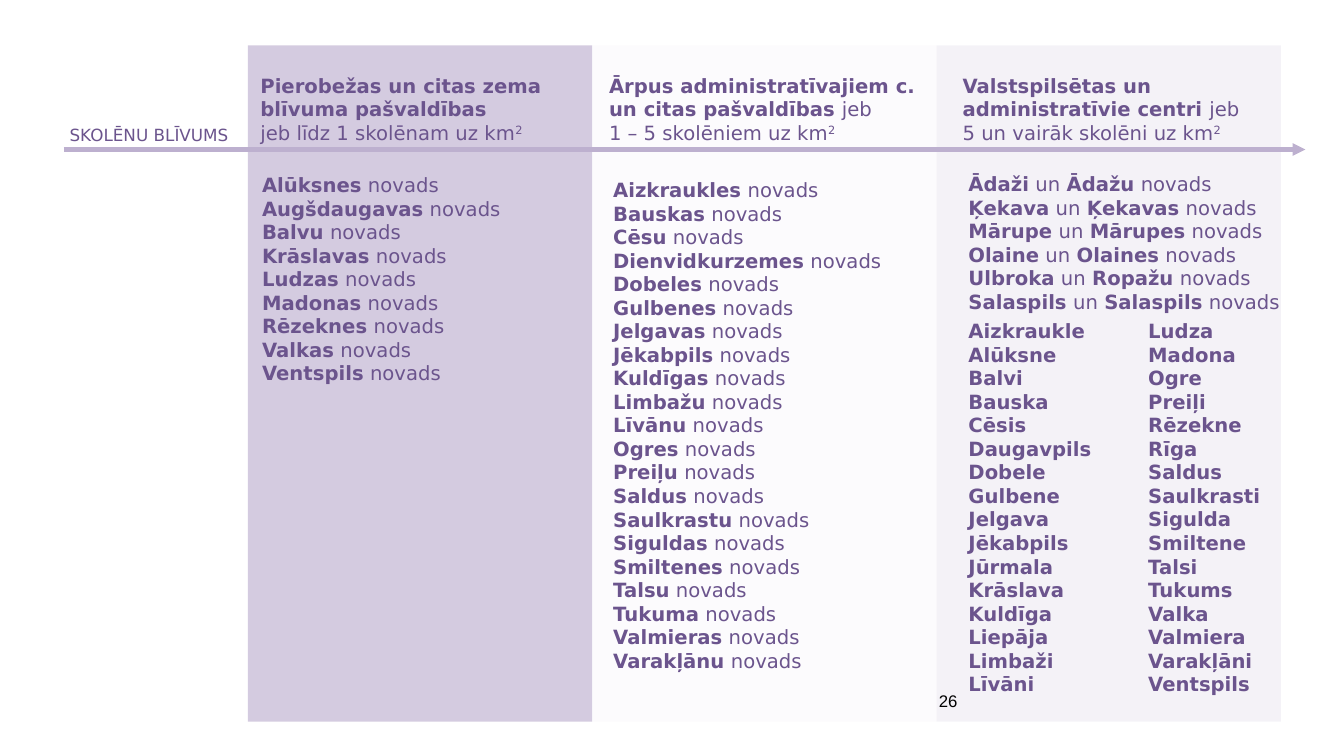
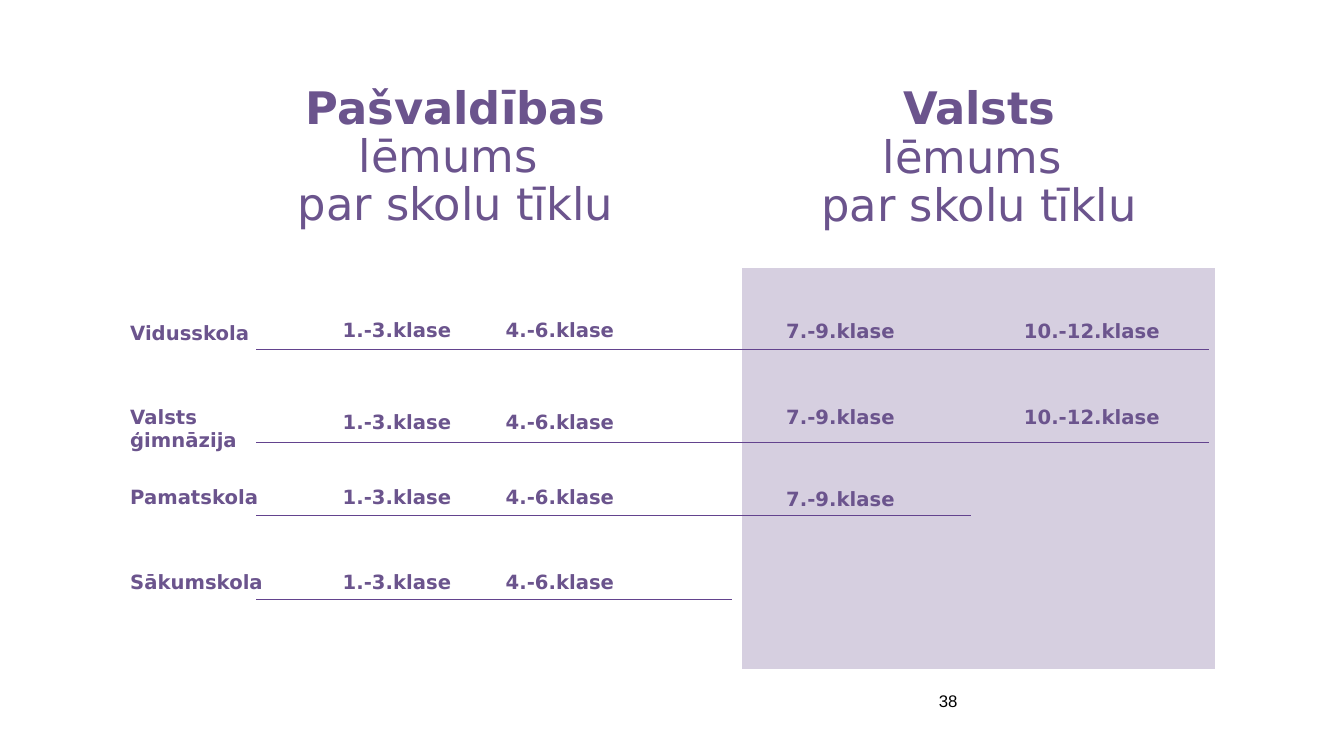
from dataclasses import dataclass
from typing import Optional, Sequence

from lxml.etree import SubElement
from pptx import Presentation
from pptx.dml.color import RGBColor
from pptx.enum.shapes import MSO_CONNECTOR as Connector, MSO_SHAPE as Preset
from pptx.enum.text import MSO_ANCHOR as Anchor, MSO_AUTO_SIZE as AutoSize, PP_ALIGN as Align
from pptx.oxml.ns import qn
from pptx.util import Emu, Pt

# The 16:9 slide is a grid of 160 by 90 square cells.
COLUMNS, ROWS = 160, 90
CELL = 76200

TEXT_PURPLE = RGBColor(0x6B, 0x54, 0x8D)
DEEP_PURPLE = RGBColor(0x66, 0x46, 0x90)
SOFT_PURPLE = RGBColor(0xDA, 0xD3, 0xE5)
PALE_PURPLE = RGBColor(0xF5, 0xF4, 0xF8)
PANEL_PURPLE = RGBColor(0xD6, 0xCF, 0xE0)
AXIS_PURPLE = RGBColor(0xBD, 0xB0, 0xCF)
LINE_PURPLE = RGBColor(0x63, 0x43, 0x8E)
WHITE = RGBColor(0xFF, 0xFF, 0xFF)
BLACK = RGBColor(0, 0, 0)

FONT = "DejaVu Sans"
PAGE_FONT = "Arial"
INSET = 0.6
BAND_OPACITY = 28


@dataclass(frozen=True)
class Box:
    left: float
    top: float
    width: float
    height: float

    def lengths(self) -> list[Emu]:
        return [cells(n) for n in (self.left, self.top, self.width, self.height)]


@dataclass(frozen=True)
class Piece:
    text: str
    bold: bool = False
    superscript: bool = False


Line = Sequence[Piece]


@dataclass(frozen=True)
class TextStyle:
    size: float = 14
    font: str = FONT
    color: RGBColor = TEXT_PURPLE
    align: Align = Align.LEFT
    anchor: Anchor = Anchor.TOP
    spacing: float = 1.0
    inset: float = INSET
    wrap: bool = True


BODY = TextStyle()
AXIS_LABEL = TextStyle(size=12, align=Align.CENTER)
HEADING = TextStyle(size=32, align=Align.CENTER, anchor=Anchor.MIDDLE, spacing=0.9, inset=0)
PAGE_NUMBER = TextStyle(size=12, font=PAGE_FONT, color=BLACK, align=Align.RIGHT,
                        anchor=Anchor.MIDDLE, wrap=False)


@dataclass(frozen=True)
class Band:
    color: RGBColor
    header: Box
    header_lines: Sequence[Line]


@dataclass(frozen=True)
class SchoolRow:
    name: str
    name_top: float
    local_top: float
    state_top: float
    line_top: float
    stages: int


def cells(count: float) -> Emu:
    return Emu(round(count * CELL))


def fill_text(frame, lines: Sequence[Line], style: TextStyle) -> None:
    frame.auto_size = AutoSize.NONE
    frame.word_wrap = style.wrap
    frame.vertical_anchor = style.anchor
    frame.margin_left = frame.margin_right = cells(style.inset)
    frame.margin_top = frame.margin_bottom = cells(style.inset)
    for index, line in enumerate(lines):
        paragraph = frame.add_paragraph() if index else frame.paragraphs[0]
        paragraph.alignment = style.align
        paragraph.line_spacing = style.spacing
        for piece in line:
            run = paragraph.add_run()
            run.text = piece.text
            run.font.name = style.font
            run.font.size = Pt(style.size)
            run.font.bold = piece.bold
            run.font.color.rgb = style.color
            if piece.superscript:
                run._r.get_or_add_rPr().set("baseline", "30000")


def add_text(slide, box: Box, lines: Sequence[Line], style: TextStyle = BODY) -> None:
    fill_text(slide.shapes.add_textbox(*box.lengths()).text_frame, lines, style)


def add_rectangle(slide, box: Box, color: RGBColor, opacity: int = 100,
                  border: Optional[RGBColor] = None) -> None:
    shape = slide.shapes.add_shape(Preset.RECTANGLE, *box.lengths())
    shape.shadow.inherit = False
    shape.fill.solid()
    shape.fill.fore_color.rgb = color
    if opacity < 100:
        color_element = next(shape._element.spPr.iter(qn("a:srgbClr")))
        SubElement(color_element, qn("a:alpha")).set("val", str(opacity * 1000))
    if border is None:
        shape.line.fill.background()
    else:
        shape.line.color.rgb = border
        shape.line.width = Pt(2)


def add_level_line(slide, left: float, right: float, top: float, color: RGBColor,
                   width: float, arrow: bool = False) -> None:
    connector = slide.shapes.add_connector(
        Connector.STRAIGHT, cells(left), cells(top), cells(right), cells(top))
    connector.line.color.rgb = color
    connector.line.width = Pt(width)
    if arrow:
        SubElement(connector.line._get_or_add_ln(), qn("a:tailEnd")).set("type", "triangle")
    SubElement(connector._element.spPr, qn("a:effectLst"))


def add_page_number(slide, number: int) -> None:
    add_text(slide, Box(77.3, 81, 37.3, 4.8), [[Piece(str(number))]], PAGE_NUMBER)


def bold_lines(names: str) -> list[Line]:
    return [[Piece(name, True)] for name in names.split()]


def county_lines(names: str) -> list[Line]:
    return [[Piece(name, True), Piece(" novads")] for name in names.split()]


def pair_lines(pairs: Sequence[tuple[str, str]]) -> list[Line]:
    return [[Piece(town, True), Piece(" un "), Piece(county, True), Piece(" novads")]
            for town, county in pairs]


def density_line(text: str) -> Line:
    return [Piece(text), Piece("2", superscript=True)]


def heading_lines(decider: str) -> list[Line]:
    return [[Piece(decider, True)], [Piece("lēmums ")], [Piece("par skolu tīklu")]]


BAND_LEFT, BAND_WIDTH = 29.5, 41
BANDS = [
    Band(DEEP_PURPLE, Box(30.4, 8.2, 38.6, 9.7),
         [[Piece("Pierobežas un citas zema blīvuma pašvaldības", True)],
          density_line("jeb līdz 1 skolēnam uz km")]),
    Band(PALE_PURPLE, Box(71.9, 8.2, 38, 9.7),
         [[Piece("Ārpus administratīvajiem c. un citas pašvaldības ", True), Piece("jeb")],
          density_line("1 – 5 skolēniem uz km")]),
    Band(SOFT_PURPLE, Box(114, 8.2, 36.5, 9.7),
         [[Piece("Valstspilsētas un administratīvie centri ", True), Piece("jeb")],
          density_line("5 un vairāk skolēni uz km")]),
]

PLACE_LISTS = [
    (Box(30.6, 20, 39.4, 26.6), county_lines(
        "Alūksnes Augšdaugavas Balvu Krāslavas Ludzas Madonas Rēzeknes Valkas Ventspils")),
    (Box(72.4, 20.6, 39.4, 60.6), county_lines(
        "Aizkraukles Bauskas Cēsu Dienvidkurzemes Dobeles Gulbenes Jelgavas Jēkabpils "
        "Kuldīgas Limbažu Līvānu Ogres Preiļu Saldus Saulkrastu Siguldas Smiltenes Talsu "
        "Tukuma Valmieras Varakļānu")),
    (Box(114.7, 19.9, 39.4, 18.1), pair_lines(
        [("Ādaži", "Ādažu"), ("Ķekava", "Ķekavas"), ("Mārupe", "Mārupes"),
         ("Olaine", "Olaines"), ("Ulbroka", "Ropažu"), ("Salaspils", "Salaspils")])),
    (Box(114.7, 37.4, 19, 46.5), bold_lines(
        "Aizkraukle Alūksne Balvi Bauska Cēsis Daugavpils Dobele Gulbene Jelgava Jēkabpils "
        "Jūrmala Krāslava Kuldīga Liepāja Limbaži Līvāni")),
    (Box(136.1, 37.4, 19, 46.5), bold_lines(
        "Ludza Madona Ogre Preiļi Rēzekne Rīga Saldus Saulkrasti Sigulda Smiltene Talsi "
        "Tukums Valka Valmiera Varakļāni Ventspils")),
]

# Grade groups with their left edges; the first two are decided locally.
STAGES = [("1.-3.klase", 40.2), ("4.-6.klase", 59.6), ("7.-9.klase", 93), ("10.-12.klase", 121.3)]
LOCAL_STAGES = 2
STAGE_LINE_LEFT, STAGE_WIDTH = 30.5, 28.35
SCHOOL_ROWS = [
    SchoolRow("Vidusskola", 37.6, 37.2, 37.4, 41.6, 4),
    SchoolRow("Valsts ģimnāzija", 47.6, 48.2, 47.6, 52.7, 4),
    SchoolRow("Pamatskola", 57.2, 57.2, 57.4, 61.4, 3),
    SchoolRow("Sākumskola", 67.2, 67.2, 67.2, 71.4, 2),
]


def add_school_row(slide, row: SchoolRow) -> None:
    line_right = STAGE_LINE_LEFT + row.stages * STAGE_WIDTH
    add_level_line(slide, STAGE_LINE_LEFT, line_right, row.line_top, LINE_PURPLE, 1)
    add_text(slide, Box(14.9, row.name_top, 17.5, 4.1), [[Piece(row.name, True)]])
    for index, (stage, left) in enumerate(STAGES[:row.stages]):
        top = row.local_top if index < LOCAL_STAGES else row.state_top
        add_text(slide, Box(left, top, 20.5, 4.1), [[Piece(stage, True)]])


def build_density_slide(presentation) -> None:
    slide = presentation.slides.add_slide(presentation.slide_layouts[6])
    for index, band in enumerate(BANDS):
        box = Box(BAND_LEFT + index * BAND_WIDTH, 5.4, BAND_WIDTH, 80.5)
        add_rectangle(slide, box, band.color, BAND_OPACITY)
    add_level_line(slide, 7.6, 155.4, 17.8, AXIS_PURPLE, 3, arrow=True)
    add_text(slide, Box(6.6, 14.2, 22.3, 3.7), [[Piece("SKOLĒNU BLĪVUMS")]], AXIS_LABEL)
    for band in BANDS:
        add_text(slide, band.header, band.header_lines)
    for box, lines in PLACE_LISTS:
        add_text(slide, box, lines)
    add_page_number(slide, 26)


def build_decision_slide(presentation) -> None:
    slide = presentation.slides.add_slide(presentation.slide_layouts[5])
    title = slide.shapes.title
    title.left, title.top, title.width, title.height = Box(95.6, 10.2, 42, 17.4).lengths()
    fill_text(title.text_frame, heading_lines("Valsts"), HEADING)
    add_text(slide, Box(29.9, 10.1, 48.7, 17.4), heading_lines("Pašvaldības"), HEADING)
    add_rectangle(slide, Box(88.2, 31.8, 56.6, 48), PANEL_PURPLE, border=WHITE)
    for row in SCHOOL_ROWS:
        add_school_row(slide, row)
    add_page_number(slide, 38)


def main() -> None:
    presentation = Presentation()
    presentation.slide_width = cells(COLUMNS)
    presentation.slide_height = cells(ROWS)
    build_density_slide(presentation)
    build_decision_slide(presentation)
    presentation.save("out.pptx")


if __name__ == "__main__":
    main()
